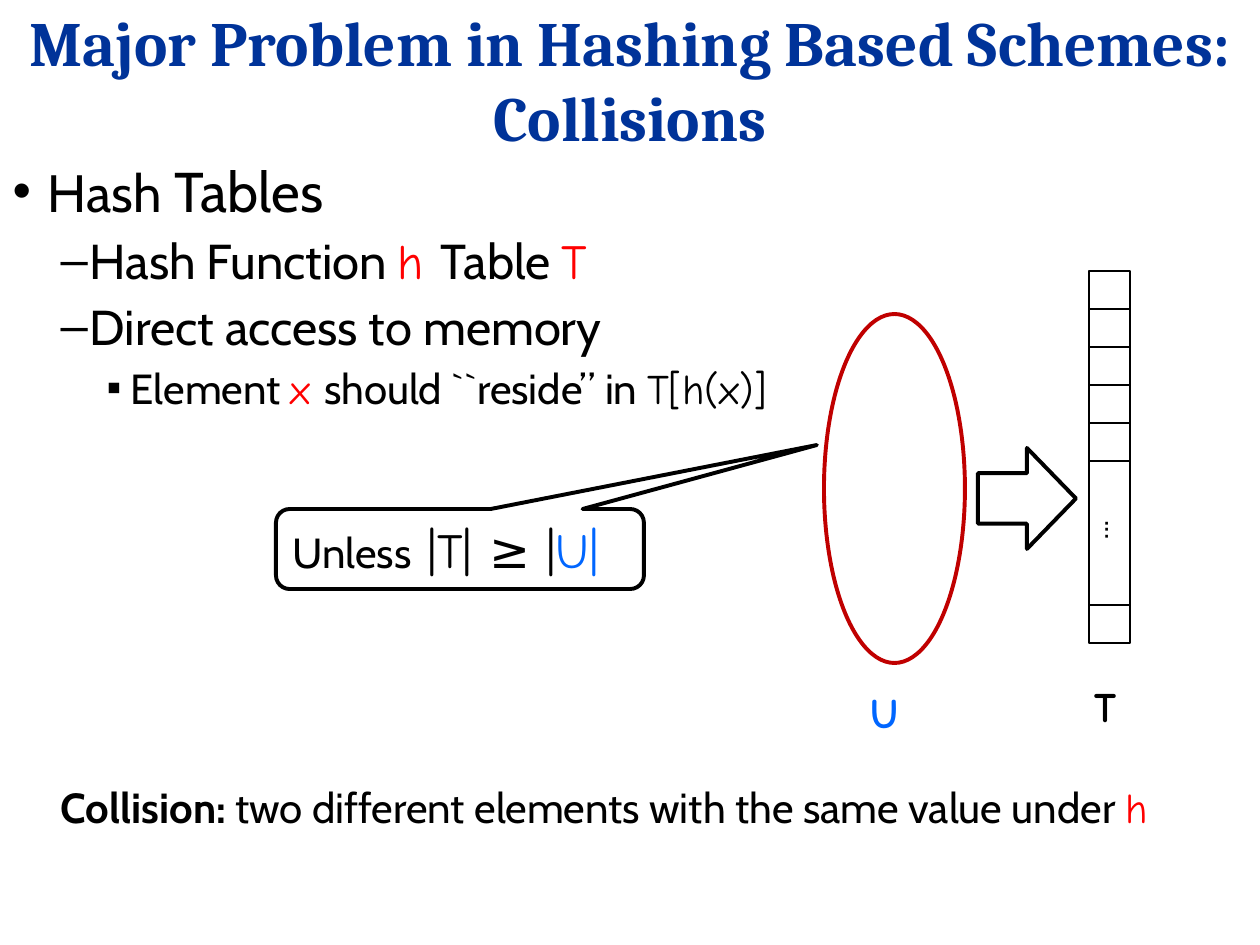
from lxml import etree
from pptx import Presentation
from pptx.dml.color import RGBColor
from pptx.enum.shapes import MSO_SHAPE
from pptx.enum.text import MSO_ANCHOR, MSO_AUTO_SIZE, PP_ALIGN
from pptx.oxml.ns import qn
from pptx.util import Pt

SCALE = 914400 / 126
CENTER, LEFT = PP_ALIGN.CENTER, PP_ALIGN.LEFT
MIDDLE, TOP = MSO_ANCHOR.MIDDLE, MSO_ANCHOR.TOP
NO_AUTOFIT = MSO_AUTO_SIZE.NONE
OVAL, ARROW, RECTANGLE = MSO_SHAPE.OVAL, MSO_SHAPE.RIGHT_ARROW, MSO_SHAPE.RECTANGLE
CALLOUT = MSO_SHAPE.ROUNDED_RECTANGULAR_CALLOUT

BLACK = RGBColor(0x00, 0x00, 0x00)
NAVY = RGBColor(0x00, 0x33, 0x99)
BLUE = RGBColor(0x00, 0x66, 0xFF)
RED = RGBColor(0xFF, 0x00, 0x00)
DARK_RED = RGBColor(0xC0, 0x00, 0x00)
TITLE_FONT, BODY_FONT, SYMBOL_FONT = "Cambria", "Cabin", "Comic Neue"

RED_SYMBOL = {"font": SYMBOL_FONT, "color": RED}
TITLE = "Major Problem in Hashing Based Schemes: Collisions"
# level, bullet, left margin px, indent px, space before pt, size pt, runs
BODY = [
    (0, "•", 35, -35, 4, 32, [("Hash", {"size": 30}), (" Tables", {})]),
    (1, "–", 77, -29, 4, 28, [("Hash Function ", {}), ("h ", RED_SYMBOL),
                              ("Table ", {}), ("T", RED_SYMBOL)]),
    (1, "–", 77, -29, 4, 28, [("Direct access to memory", {})]),
    (2, "▪", 118, -24, 4, 24, [("Element ", {}), ("x ", RED_SYMBOL),
                               ("should ``reside” in ", {}),
                               ("T[h(x)]", {"font": SYMBOL_FONT})]),
    (1, None, 48, 0, 211, 24, [("Collision: ", {"bold": True}),
                               ("two different elements with the same value under ", {}),
                               ("h", RED_SYMBOL)]),
]
CALLOUT_RUNS = [
    ("Unless", {"size": 24}),
    (" |T| ≥ |", {"size": 28, "font": SYMBOL_FONT}),
    ("U|", {"size": 28, "font": SYMBOL_FONT, "color": BLUE}),
]
SET_LABELS = [("U", 854, 680, BLUE), ("T", 1075, 674, BLACK)]
TABLE_LEFT, TABLE_TOP, TABLE_WIDTH = 1089, 271, 41
CELL_HEIGHTS = [38] * 5 + [144, 38]


def px(length):
    return round(length * SCALE)


def box(*lengths):
    return [px(length) for length in lengths]


def write(paragraph, text, size=24, font=BODY_FONT, color=BLACK, bold=False):
    run = paragraph.add_run()
    run.text = text
    run.font.size = Pt(size)
    run.font.name = font
    run.font.color.rgb = color
    run.font.bold = bold


def set_bullet(paragraph, bullet, margin, indent):
    properties = paragraph._p.get_or_add_pPr()
    properties.set("marL", str(px(margin)))
    properties.set("indent", str(px(indent)))
    if bullet:
        etree.SubElement(properties, qn("a:buChar")).set("char", bullet)
    else:
        etree.SubElement(properties, qn("a:buNone"))


def place(placeholder, *lengths, anchor):
    placeholder.left, placeholder.top, placeholder.width, placeholder.height = box(*lengths)
    frame = placeholder.text_frame
    frame.auto_size = NO_AUTOFIT
    frame.vertical_anchor = anchor
    return frame


def add_outline(slide, kind, *lengths, color=BLACK, weight=2.25):
    shape = slide.shapes.add_shape(kind, *box(*lengths))
    shape.shadow.inherit = False
    shape.fill.background()
    shape.line.color.rgb = color
    shape.line.width = Pt(weight)
    return shape


def add_label(slide, text, *lengths, **text_format):
    label = slide.shapes.add_textbox(*box(*lengths))
    label.text_frame.word_wrap = True
    paragraph = label.text_frame.paragraphs[0]
    paragraph.alignment = CENTER
    write(paragraph, text, **text_format)
    return label


def add_body(placeholder):
    frame = place(placeholder, 0, 150, 1246, 780, anchor=TOP)
    for index, (level, bullet, margin, indent, before, size, runs) in enumerate(BODY):
        paragraph = frame.add_paragraph() if index else frame.paragraphs[0]
        paragraph.level = level
        paragraph.alignment = LEFT
        paragraph.space_before = Pt(before)
        set_bullet(paragraph, bullet, margin, indent)
        for text, text_format in runs:
            write(paragraph, text, **{"size": size, **text_format})


def add_hash_table(slide):
    top = TABLE_TOP
    for height in CELL_HEIGHTS:
        add_outline(slide, RECTANGLE, TABLE_LEFT, top, TABLE_WIDTH, height, weight=0.75)
        top += height
    dots = add_label(slide, "...", 1091, 505, 54, 50, size=18)
    dots.rotation = 90


def add_callout(slide):
    callout = add_outline(slide, CALLOUT, 276, 509, 368, 80)
    for index, value in enumerate((0.97, -1.3, 0.17)):
        callout.adjustments[index] = value
    frame = callout.text_frame
    frame.word_wrap = False
    frame.vertical_anchor = MIDDLE
    paragraph = frame.paragraphs[0]
    paragraph.alignment = LEFT
    for text, text_format in CALLOUT_RUNS:
        write(paragraph, text, **text_format)


def main():
    presentation = Presentation()
    presentation.slide_width, presentation.slide_height = box(1260, 945)
    slide = presentation.slides.add_slide(presentation.slide_layouts[1])

    title = place(slide.shapes.title, 0, 25, 1260, 108, anchor=MIDDLE).paragraphs[0]
    title.alignment = CENTER
    write(title, TITLE, size=36, font=TITLE_FONT, color=NAVY, bold=True)
    add_body(slide.placeholders[1])

    add_outline(slide, OVAL, 824, 314, 141, 349, color=DARK_RED)
    add_outline(slide, ARROW, 978, 448, 98, 101)
    for text, left, top, color in SET_LABELS:
        add_label(slide, text, left, top, 62, 64, font=SYMBOL_FONT, color=color, bold=True)
    add_hash_table(slide)
    add_callout(slide)
    presentation.save("out.pptx")


if __name__ == "__main__":
    main()
